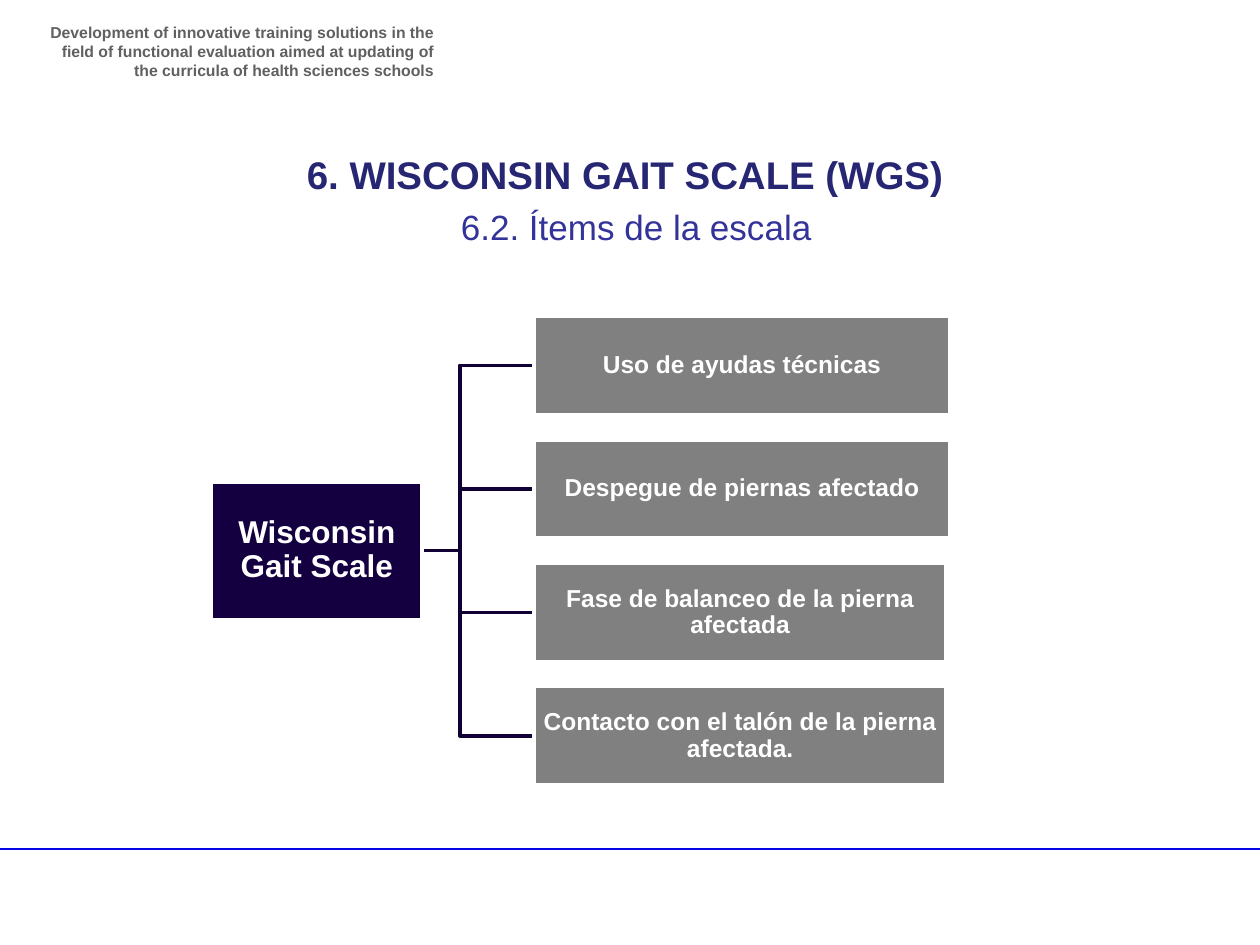
"""Builds the slide with the items of the Wisconsin Gait Scale as a tree."""
from pptx import Presentation
from pptx.dml.color import RGBColor
from pptx.enum.shapes import MSO_CONNECTOR, MSO_SHAPE
from pptx.enum.text import MSO_ANCHOR, PP_ALIGN
from pptx.oxml.ns import qn
from pptx.util import Inches, Pt

RECT, STRAIGHT = MSO_SHAPE.RECTANGLE, MSO_CONNECTOR.STRAIGHT
LEFT, CENTER, RIGHT = PP_ALIGN.LEFT, PP_ALIGN.CENTER, PP_ALIGN.RIGHT
TOP, MIDDLE = MSO_ANCHOR.TOP, MSO_ANCHOR.MIDDLE


def rgb(value):
    return RGBColor.from_string(value)


def add_text(text, x, y, w, h, size, color="FFFFFF", bold=True, align=CENTER, fill=None):
    box = [Inches(v) for v in (x, y, w, h)]
    if fill:
        sp = s.shapes.add_shape(RECT, *box)
        sp.shadow.inherit = False
        sp.fill.solid()
        sp.fill.fore_color.rgb = rgb(fill)
        sp.line.color.rgb = rgb("FFFFFF")
        sp.line.width = Pt(2)
    else:
        sp = s.shapes.add_textbox(*box)
    tf = sp.text_frame
    tf.word_wrap = True
    tf.vertical_anchor = MIDDLE if fill else TOP
    p = tf.paragraphs[0]
    p.alignment = align
    if fill:
        tf.margin_left = tf.margin_right = tf.margin_top = tf.margin_bottom = Inches(0.01)
        p.line_spacing = 0.9
    r = p.add_run()
    r.text = text
    r.font.name, r.font.size, r.font.bold = "Arial", Pt(size), bold
    r.font.color.rgb = rgb(color)


prs = Presentation()
prs.slide_width, prs.slide_height = Inches(10), Inches(7.5)
s = prs.slides.add_slide(prs.slide_layouts[6])

rule = s.shapes.add_connector(STRAIGHT, Inches(-0.05), Inches(6.74), Inches(10), Inches(6.74))
rule.line.color.rgb = rgb("0404E6")
rule.line.width = Pt(1)
rule._element.spPr.append(rule._element.makeelement(qn("a:effectLst"), {}))

add_text("Development of innovative training solutions in the ﬁeld of functional evaluation "
         "aimed at updating of the curricula of health sciences schools",
         0.28, 0.13, 3.26, 0.47, 9, color="606060", align=RIGHT)
add_text("6. WISCONSIN GAIT SCALE (WGS)", 0.67, 1.15, 8.58, 0.47, 22, color="262673")
add_text("6.2. Ítems de la escala", 3.56, 1.58, 3.06, 0.77, 20,
         color="333399", bold=False, align=LEFT)

items = [
    ("Uso de ayudas técnicas", 3.3),
    ("Despegue de piernas afectado", 3.3),
    ("Fase de balanceo de la pierna afectada", 3.27),
    ("Contacto con el talón de la pierna afectada.", 3.27),
]
root_x, root_y, root_w, root_h = 1.68, 4.37, 1.67, 1.09
item_x, item_h, pitch = 4.24, 0.78, 0.98
start_x, trunk_x = 3.06, 3.65
centers = [root_y + (i - (len(items) - 1) / 2) * pitch for i in range(len(items))]

for y in reversed(centers):
    fb = s.shapes.build_freeform(Inches(start_x), Inches(root_y))
    fb.add_line_segments([(Inches(a), Inches(b)) for a, b in
                          ((trunk_x, root_y), (trunk_x, y), (item_x, y))], close=False)
    sp = fb.convert_to_shape()
    sp.shadow.inherit = False
    sp.fill.background()
    sp.line.color.rgb = rgb("100034")
    sp.line.width = Pt(2)

add_text("Wisconsin Gait Scale", root_x, root_y - root_h / 2, root_w, root_h, 18, fill="140041")
for (text, w), y in zip(items, centers):
    add_text(text, item_x, y - item_h / 2, w, item_h, 14, fill="808080")

prs.save("out.pptx")
